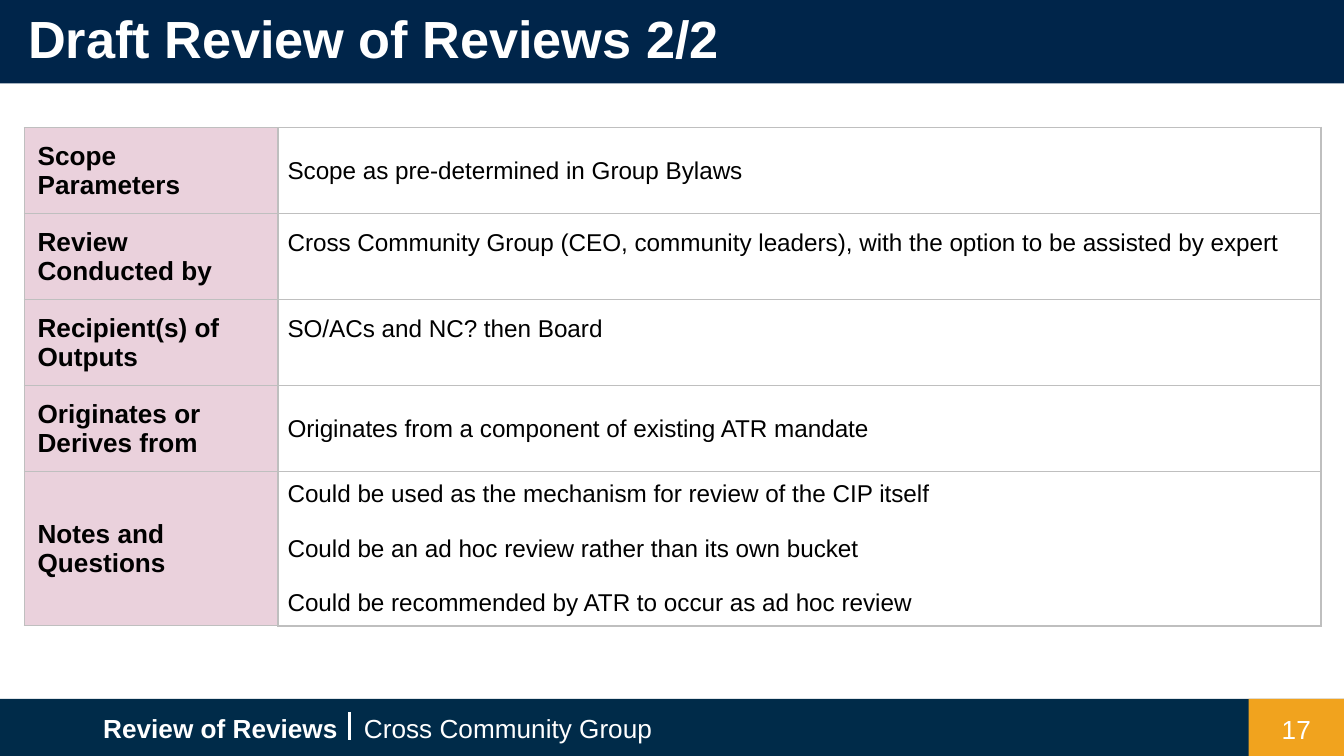
from lxml import etree
from pptx import Presentation
from pptx import util as u
from pptx.dml.color import RGBColor
from pptx.enum import shapes, text
from pptx.oxml.ns import qn

WIDTH = 10
HEIGHT = WIDTH * 9 / 16
HEADER_H, FOOTER_H = 0.62, 0.43
FOOTER_TOP = 5.2
NUMBER_W = 0.71
ROW_H, NOTES_H = 0.64, 1.14
COLUMNS = (1.89, 7.76)
FONT = "Arial"
COLORS = {
    "header": "00254A",
    "footer": "002B49",
    "accent": "F1A31E",
    "label": "EAD1DC",
    "border": "BFBFBF",
    "light": "FFFFFF",
    "dark": "000000",
}
# Label, statements, extra room below the statements
ROWS = [
    ("Scope Parameters", ["Scope as pre-determined in Group Bylaws"], 0),
    ("Review Conducted by",
     ["Cross Community Group (CEO, community leaders), "
      "with the option to be assisted by expert"], 0.2),
    ("Recipient(s) of Outputs", ["SO/ACs and NC? then Board"], 0.2),
    ("Originates or Derives from",
     ["Originates from a component of existing ATR mandate"], 0),
    ("Notes and Questions",
     ["Could be used as the mechanism for review of the CIP itself",
      "Could be an ad hoc review rather than its own bucket",
      "Could be recommended by ATR to occur as ad hoc review"], 0),
]


def color(name):
    return RGBColor.from_string(COLORS[name])


def set_margins(holder, side, bottom=None):
    holder.margin_left = holder.margin_right = u.Inches(side)
    holder.margin_top = u.Inches(side)
    holder.margin_bottom = u.Inches(side if bottom is None else bottom)


def write(frame, lines, size, ink, bold=False, align=text.PP_ALIGN.LEFT, gap=0):
    """Fill a text frame with one paragraph per line, gap points apart."""
    for index, line in enumerate(lines):
        paragraph = frame.add_paragraph() if index else frame.paragraphs[0]
        paragraph.text = line
        paragraph.alignment = align
        if index:
            paragraph.space_before = u.Pt(gap)
        font = paragraph.font
        font.name, font.size, font.bold = FONT, u.Pt(size), bold
        font.color.rgb = color(ink)


def add_band(slide, left, top, width, height, fill):
    band = slide.shapes.add_shape(
        shapes.MSO_SHAPE.RECTANGLE, *map(u.Inches, (left, top, width, height)))
    band.shadow.inherit = False
    band.fill.solid()
    band.fill.fore_color.rgb = color(fill)
    band.line.fill.background()


def add_footer_text(slide, left, top, width, words, **style):
    box = slide.shapes.add_textbox(
        *map(u.Inches, (left, top, width, FOOTER_H)))
    frame = box.text_frame
    frame.word_wrap = True
    frame.vertical_anchor = text.MSO_ANCHOR.MIDDLE
    set_margins(frame, 0.1)
    write(frame, [words], 14, "light", **style)


def add_divider(slide, x, top, bottom):
    divider = slide.shapes.add_connector(
        shapes.MSO_CONNECTOR.STRAIGHT, *map(u.Inches, (x, top, x, bottom)))
    divider.line.color.rgb = color("light")
    divider.line.width = u.Pt(1.5)
    etree.SubElement(divider._element.spPr, qn("a:effectLst"))


def add_footer(slide):
    number_left = WIDTH - NUMBER_W
    add_band(slide, 0, FOOTER_TOP, WIDTH, FOOTER_H, "footer")
    add_band(slide, number_left, FOOTER_TOP, NUMBER_W, FOOTER_H, "accent")
    add_footer_text(slide, 0.67, FOOTER_TOP, 2, "Review of Reviews", bold=True)
    add_footer_text(slide, 2.61, FOOTER_TOP, 2.51, "Cross Community Group")
    add_divider(slide, 2.6, 5.3, 5.51)
    add_footer_text(slide, number_left, FOOTER_TOP + 0.01, NUMBER_W, "17",
                    align=text.PP_ALIGN.CENTER)


def add_title(slide, words):
    add_band(slide, 0, 0, WIDTH, HEADER_H, "header")
    title = slide.shapes.title
    title.left, title.top, title.width, title.height = map(
        u.Inches, (0.11, 0, 9.83, 0.6))
    frame = title.text_frame
    frame.vertical_anchor = text.MSO_ANCHOR.TOP
    write(frame, [words], 28, "light", bold=True)
    # The title is drawn above the header band
    slide.shapes._spTree.append(title._element)


def set_borders(cell, width):
    properties = cell._tc.get_or_add_tcPr()
    for edge in ("a:lnL", "a:lnR", "a:lnT", "a:lnB"):
        line = etree.SubElement(properties, qn(edge), w=str(u.Pt(width)))
        fill = etree.SubElement(line, qn("a:solidFill"))
        etree.SubElement(fill, qn("a:srgbClr"), val=COLORS["border"])


def fill_label(cell, label):
    set_borders(cell, 0.75)
    cell.fill.solid()
    cell.fill.fore_color.rgb = color("label")
    set_margins(cell, 0.1)
    write(cell.text_frame, [label], 14, "dark", bold=True)


def fill_statements(cell, statements, room_below):
    set_borders(cell, 1)
    cell.fill.background()
    set_margins(cell, 0.07, 0.07 + room_below)
    write(cell.text_frame, statements, 13, "dark", gap=14.5)


def add_review_table(slide):
    heights = [ROW_H] * (len(ROWS) - 1) + [NOTES_H]
    table = slide.shapes.add_table(
        len(ROWS), len(COLUMNS),
        *map(u.Inches, (0.18, 0.95, sum(COLUMNS), sum(heights)))).table
    table.first_row = table.horz_banding = False
    for column, width in zip(table.columns, COLUMNS):
        column.width = u.Inches(width)
    for row, height, (label, statements, room) in zip(table.rows, heights, ROWS):
        row.height = u.Inches(height)
        fill_label(row.cells[0], label)
        fill_statements(row.cells[1], statements, room)
        for cell in row.cells:
            cell.vertical_anchor = text.MSO_ANCHOR.MIDDLE


def main():
    deck = Presentation()
    deck.slide_width, deck.slide_height = u.Inches(WIDTH), u.Inches(HEIGHT)
    slide = deck.slides.add_slide(deck.slide_layouts.get_by_name("Title Only"))
    add_footer(slide)
    add_title(slide, "Draft Review of Reviews 2/2")
    add_review_table(slide)
    deck.save("out.pptx")


if __name__ == "__main__":
    main()
